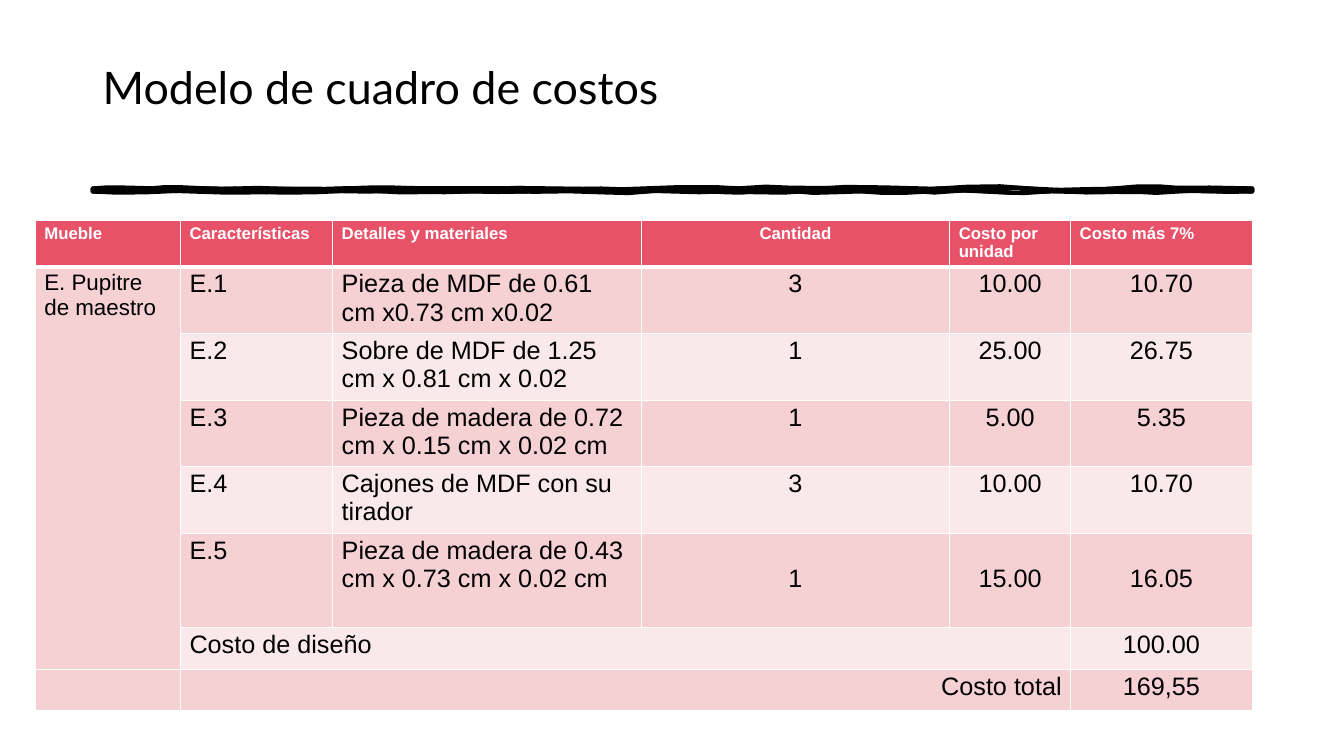
from lxml.etree import SubElement
from pptx import Presentation
from pptx.dml.color import RGBColor
from pptx.enum.text import MSO_ANCHOR, PP_ALIGN
from pptx.oxml.ns import qn
from pptx.util import Inches, Pt

LEFT, CENTER, RIGHT = PP_ALIGN.LEFT, PP_ALIGN.CENTER, PP_ALIGN.RIGHT
BLACK, WHITE = "000000", "FFFFFF"
HEADER_PINK, DARK_PINK, LIGHT_PINK = "E75269", "F6D1D4", "FAE9EB"


def color(hex_text):
    return RGBColor.from_string(hex_text)


def wavy_edge(start, y, pull, waves):
    """Trace a wavy line; waves holds (end x, pull in hundredths of an inch)."""
    points = []
    for end, end_pull in waves:
        for t in (0.3, 0.7):
            bend = 3 * (1 - t) ** 2 * t * pull + 3 * (1 - t) * t ** 2 * end_pull
            points.append((Inches(start + (end - start) * t), Inches(y + bend / 100)))
        start, pull = end, -end_pull
    return points + [(Inches(start), Inches(y))]


presentation = Presentation()
presentation.slide_width, presentation.slide_height = Inches(13.33), Inches(7.5)
slide = presentation.slides.add_slide(presentation.slide_layouts[6])

# Hand-drawn rule: two strokes in one shape, each with two wavy edges
RULE_LEFT, RULE_RIGHT, RULE_TOP, RULE_BOTTOM = 0.92, 12.42, 1.87, 1.9
first_top = [(1.41, -1), (2.12, -1), (2.96, 0), (3.33, 1), (3.71, 1), (4.65, 0),
             (5.37, -1), (5.75, 1), (6.47, 3), (7.41, 4), (8.02, 0), (8.62, -2),
             (9.34, 2), (10.17, -4), (11.01, 0), (RULE_RIGHT, -2)]
first_bottom = [(11.93, 0), (10.98, -3), (10.26, -3), (9.89, 1), (9.17, -2),
                (8.56, 2), (7.96, -2), (7.36, 1), (6.75, 2), (5.92, 2), (5.2, 0),
                (4.83, 1), (4.22, 2), (3.39, 1), (2.9, -1), (1.95, 2), (RULE_LEFT, 0)]
second_top = [(1.52, 2), (1.89, -2), (2.84, -2), (3.45, 1), (4.05, -2), (5, 1),
              (5.49, 0), (6.44, 2), (7.39, -2), (8.1, 3), (9.05, -1), (9.66, -1),
              (10.26, -2), (11.09, 3), (11.7, -3), (RULE_RIGHT, 0)]
second_bottom = [(11.58, -3), (11.21, 0), (10.72, 2), (9.77, 4), (9.05, 4), (8.56, 0),
                 (7.85, 3), (7.47, -2), (7.1, 1), (6.38, -3), (5.89, 1), (5.06, 1),
                 (4.57, 0), (3.73, 2), (3.36, -1), (2.53, 2), (2.04, 1), (1.66, -1),
                 (RULE_LEFT, 2)]
rule_start = Inches(RULE_LEFT), Inches(RULE_TOP)
builder = slide.shapes.build_freeform(*rule_start)
for top, top_pull, bottom, bottom_pull in [
    (first_top, -2, first_bottom, -1),
    (second_top, 2, second_bottom, 2),
]:
    builder.move_to(*rule_start)
    builder.add_line_segments(
        wavy_edge(RULE_LEFT, RULE_TOP, top_pull, top)
        + [(Inches(RULE_RIGHT), Inches(RULE_BOTTOM))]
        + wavy_edge(RULE_RIGHT, RULE_BOTTOM, bottom_pull, bottom), close=True)
rule = builder.convert_to_shape()
rule.shadow.inherit = False
rule.fill.solid()
rule.fill.fore_color.rgb = color(BLACK)
rule.line.color.rgb = color(BLACK)
rule.line.width = Pt(3)

# Title
title = slide.shapes.add_textbox(Inches(0.92), Inches(0.4), Inches(11.5), Inches(1.45))
title.text_frame.word_wrap = True
title.text_frame.vertical_anchor = MSO_ANCHOR.MIDDLE
title.text_frame.margin_bottom = Inches(0.59)
title.text_frame.text = "Modelo de cuadro de costos"
title_font = title.text_frame.paragraphs[0].runs[0].font
title_font.name, title_font.size = "Lato", Pt(32)
title_font.color.rgb = color(BLACK)

# Cost table
rows = [
    ["Mueble", "Características", "Detalles y materiales", "Cantidad",
     "Costo por unidad", "Costo más 7%"],
    ["E. Pupitre de maestro", "E.1", "Pieza de MDF de 0.61 cm x0.73 cm x0.02",
     "3", "10.00", "10.70"],
    ["", "E.2", "Sobre de MDF de 1.25 cm x 0.81 cm x 0.02", "1", "25.00", "26.75"],
    ["", "E.3", "Pieza de madera de 0.72 cm x 0.15 cm x 0.02 cm", "1", "5.00", "5.35"],
    ["", "E.4", "Cajones de MDF con su tirador", "3", "10.00", "10.70"],
    ["", "E.5", "Pieza de madera de 0.43 cm x 0.73 cm x 0.02 cm",
     "1", "15.00", "16.05"],
    ["", "Costo de diseño", "", "", "", "100.00"],
    ["", "Costo total", "", "", "", "169,55"],
]
column_widths = [1.44, 1.51, 3.06, 3.06, 1.2, 1.8]
row_heights = [0.46, 0.66, 0.66, 0.66, 0.66, 0.94, 0.41, 0.41]
LAST_PIECE, DESIGN, TOTAL = 5, 6, 7

table = slide.shapes.add_table(
    len(rows), len(column_widths), Inches(0.35), Inches(2.19),
    Inches(sum(column_widths)), Inches(sum(row_heights))).table
table.first_row = table.horz_banding = False
for column, width in zip(table.columns, column_widths):
    column.width = Inches(width)
for row, height in zip(table.rows, row_heights):
    row.height = Inches(height)
table.cell(1, 0).merge(table.cell(DESIGN, 0))
for row_index in (DESIGN, TOTAL):
    table.cell(row_index, 1).merge(table.cell(row_index, 4))

for row_index, texts in enumerate(rows):
    is_header = row_index == 0
    for column_index, text in enumerate(texts):
        cell = table.cell(row_index, column_index)
        lowered = row_index == LAST_PIECE and column_index >= 3
        cell.margin_top = Inches(0.31 if lowered else 0.03)
        cell.margin_bottom = Inches(0.02)
        cell.margin_left = cell.margin_right = Inches(0.09)
        # Borders come before the fill in the cell properties
        properties = cell._tc.get_or_add_tcPr()
        for side in ("L", "R", "T", "B"):
            thick = (row_index, side) in [(0, "B"), (1, "T")]
            border = SubElement(properties, qn(f"a:ln{side}"), w=str(Pt(3 if thick else 1)))
            SubElement(SubElement(border, qn("a:solidFill")), qn("a:srgbClr"), val=WHITE)
        cell.fill.solid()
        is_dark = row_index % 2 == 1 or column_index == 0
        fill = HEADER_PINK if is_header else DARK_PINK if is_dark else LIGHT_PINK
        cell.fill.fore_color.rgb = color(fill)
        if not text:
            continue

        cell.text_frame.text = text
        paragraph = cell.text_frame.paragraphs[0]
        if row_index == TOTAL and column_index == 1:
            paragraph.alignment = RIGHT
        elif column_index == 3 or (column_index > 3 and not is_header):
            paragraph.alignment = CENTER
        else:
            paragraph.alignment = LEFT
        font = paragraph.runs[0].font
        font.name, font.bold = "Arial", is_header
        font.size = Pt(12 if is_header else 16 if column_index == 0 else 18)
        font.color.rgb = color(WHITE if is_header else BLACK)

presentation.save("out.pptx")
